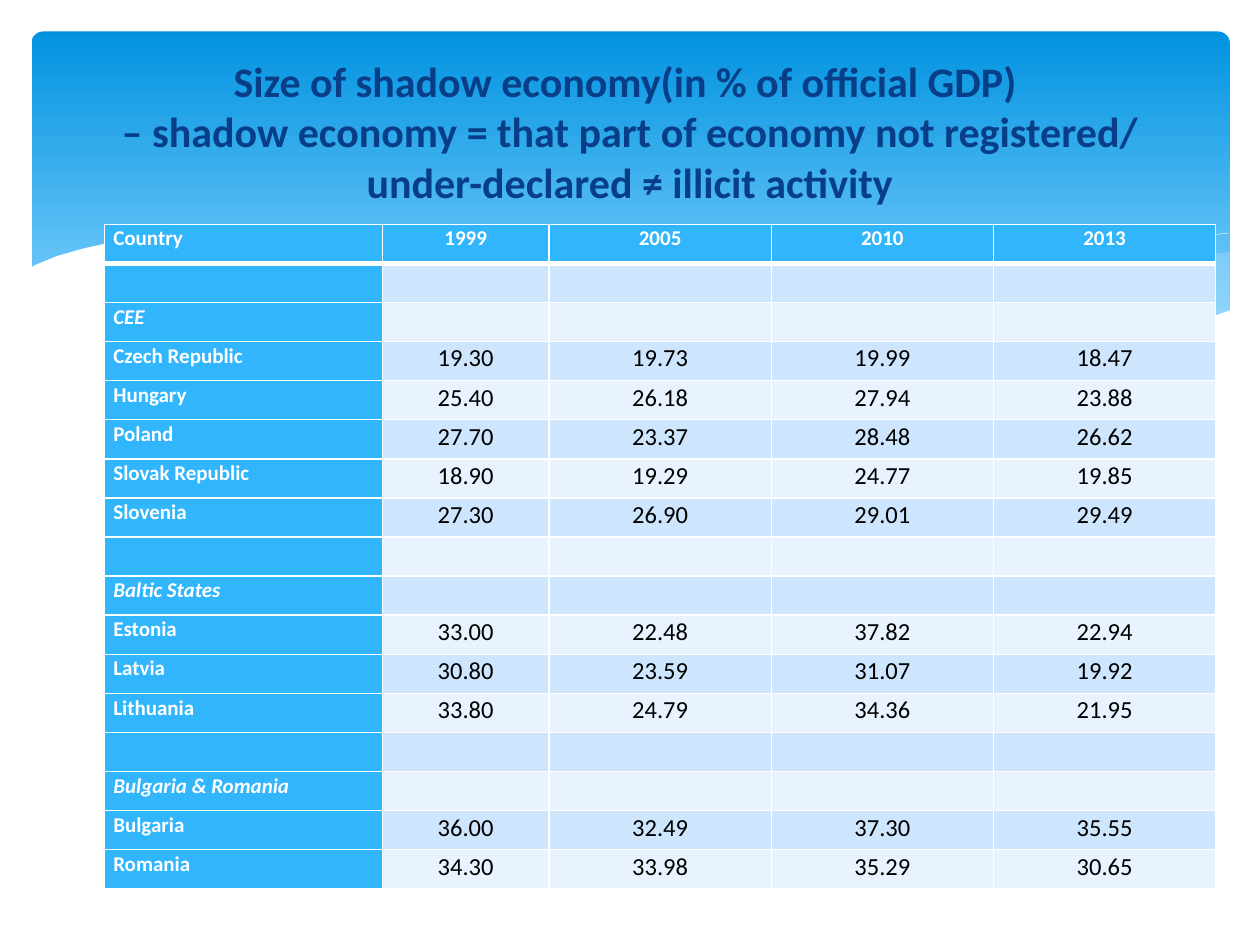
from lxml.etree import SubElement
from pptx import Presentation
from pptx.dml.color import RGBColor
from pptx.enum.shapes import MSO_SHAPE
from pptx.enum.text import MSO_ANCHOR, PP_ALIGN
from pptx.oxml.ns import qn
from pptx.util import Inches, Pt

# The slide is a grid of 100 columns by 75 rows
GRID_COLUMNS, GRID_ROWS = 100, 75
UNIT = Inches(0.1)
FONT = "Calibri"

COLORS = {
    "white": "FFFFFF",
    "black": "000000",
    "title": "073E87",
    "banner_top": "0293E0",
    "banner_bottom": "83D3FE",
    "veil": "C6E7FC",
    "header": "31B6FD",
    "band_dark": "CEE5FE",
    "band_light": "E8F3FF",
}

# Curves in percent of the wave box
RIGHT_VEIL = [
    (99.9, 11), (97, 13.8), (92.6, 20), (87.8, 26.9), (79.2, 40), (71.6, 50.3),
    (66.9, 55.9), (73, 60.7), (78.2, 64.1), (82.9, 64.8), (88.1, 62.8),
    (92.5, 58.6), (96.3, 51.7), (99.9, 43.4),
]
MIDDLE_VEIL = [
    (91.2, 61.4), (85.3, 55.9), (78.8, 48.3), (71.6, 38.6), (63.5, 26.2),
    (57.2, 16.6), (51.5, 9.7), (46.3, 4.8), (41.6, 2.1), (35.4, 0.7),
    (30.4, 2.8), (27.6, 4.8), (33.4, 10.3), (39.9, 18.6), (49.1, 33.1),
    (56.9, 44.1), (65.7, 55.2), (73.3, 62.1), (79.9, 64.8), (86.5, 64.1),
]
FALLING_LINE = [
    (30, 7.6), (33.6, 4.1), (39.6, 2.1), (46.8, 3.4), (55.9, 9), (64.3, 16.6),
    (73.8, 29), (84.7, 46.2), (92.7, 60.7),
]
RISING_LINE = [
    (61.8, 50.3), (70.4, 35.2), (78.9, 22.1), (88.4, 10.3), (94.4, 4.1), (99.8, 0.7),
]
WHITE_WAVE = [
    (100, 42.8), (96.1, 51.7), (91.8, 58.6), (86.7, 62.8), (82.4, 64.1),
    (75.6, 62.1), (69.7, 57.9), (63.2, 51), (55.8, 42.1), (44.4, 24.8),
    (35.8, 12.4), (28.2, 4.1), (21.7, 0.7), (16.1, 0), (11.4, 1.4), (7.5, 4.8),
    (4.6, 9), (2.4, 13.1), (0.6, 17.9), (0, 20), (0, 100), (100, 100),
]

TITLE = (
    "Size of shadow economy(in % of official GDP) \v"
    "– shadow economy = that part of economy not registered/\v"
    "under-declared ≠ illicit activity"
)
YEARS = ["1999", "2005", "2010", "2013"]
REGIONS = {
    "CEE": {
        "Czech Republic": (19.30, 19.73, 19.99, 18.47),
        "Hungary": (25.40, 26.18, 27.94, 23.88),
        "Poland": (27.70, 23.37, 28.48, 26.62),
        "Slovak Republic": (18.90, 19.29, 24.77, 19.85),
        "Slovenia": (27.30, 26.90, 29.01, 29.49),
    },
    "Baltic States": {
        "Estonia": (33.00, 22.48, 37.82, 22.94),
        "Latvia": (30.80, 23.59, 31.07, 19.92),
        "Lithuania": (33.80, 24.79, 34.36, 21.95),
    },
    "Bulgaria & Romania": {
        "Bulgaria": (36.00, 32.49, 37.30, 35.55),
        "Romania": (34.30, 33.98, 35.29, 30.65),
    },
}
COLUMN_SHARES = [0.25, 0.15, 0.2, 0.2, 0.2]


def color(name):
    return RGBColor.from_string(COLORS[name])


def to_emu(box):
    return [int(length * UNIT) for length in box]


def format_run(run, size, color_name, bold, italic=False):
    run.font.name = FONT
    run.font.size = Pt(size)
    run.font.bold = bold
    run.font.italic = italic
    run.font.color.rgb = color(color_name)


def add_banner(slide, box):
    banner = slide.shapes.add_shape(MSO_SHAPE.ROUNDED_RECTANGLE, *to_emu(box))
    banner.adjustments[0] = 0.034
    banner.shadow.inherit = False
    banner.line.fill.background()
    banner.fill.gradient()
    banner.fill.gradient_angle = 270
    stops = zip(banner.fill.gradient_stops, ("banner_top", "banner_bottom"), (0, 0.9))
    for stop, name, position in stops:
        stop.color.rgb = color(name)
        stop.position = position


def add_curve(slide, box, points, fill=None, opacity=100):
    """Draw a filled outline, or a thin white line when there is no fill."""
    left, top, width, height = to_emu(box)
    places = [(left + width * x / 100, top + height * y / 100) for x, y in points]
    builder = slide.shapes.build_freeform(*places[0])
    builder.add_line_segments(places[1:], close=fill is not None)
    curve = builder.convert_to_shape()
    curve.shadow.inherit = False
    if fill is None:
        curve.fill.background()
        curve.line.color.rgb = color("white")
        curve.line.width = Pt(0.25)
        return
    curve.line.fill.background()
    curve.fill.solid()
    curve.fill.fore_color.rgb = color(fill)
    if opacity < 100:
        fill_color = curve.element.spPr.find(qn("a:solidFill")).find(qn("a:srgbClr"))
        SubElement(fill_color, qn("a:alpha"), val=str(opacity * 1000))


def add_waves(slide, box):
    add_curve(slide, box, RIGHT_VEIL, "veil", 29)
    add_curve(slide, box, MIDDLE_VEIL, "veil", 40)
    add_curve(slide, box, FALLING_LINE)
    add_curve(slide, box, RISING_LINE)
    add_curve(slide, box, WHITE_WAVE, "white")


def add_title(slide, box):
    frame = slide.shapes.add_textbox(*to_emu(box)).text_frame
    frame.word_wrap = True
    frame.vertical_anchor = MSO_ANCHOR.MIDDLE
    frame.text = TITLE
    heading = frame.paragraphs[0]
    heading.alignment = PP_ALIGN.CENTER
    for run in heading.runs:
        format_run(run, 24, "title", True)


def set_borders(cell, widths):
    properties = cell._tc.get_or_add_tcPr()
    for index, (side, points) in enumerate(widths.items()):
        border = SubElement(properties, qn(f"a:{side}"), w=str(Pt(points)))
        line_fill = SubElement(border, qn("a:solidFill"))
        SubElement(line_fill, qn("a:srgbClr"), val=COLORS["white"])
        properties.insert(index, border)


def economy_rows():
    rows = [["Country", *YEARS]]
    for region, countries in REGIONS.items():
        rows += [[""] * 5, [region] + [""] * 4]
        rows += [[name, *(f"{share:.2f}" for share in shares)]
                 for name, shares in countries.items()]
    return rows


def fill_cell(cell, text, row, column):
    heading = row == 0 or column == 0
    band = "band_dark" if row % 2 else "band_light"
    cell.fill.solid()
    cell.fill.fore_color.rgb = color("header" if heading else band)
    cell.margin_left = cell.margin_right = Inches(0.07)
    cell.margin_top = cell.margin_bottom = 0
    set_borders(cell, {"lnL": 1, "lnR": 1, "lnT": 3 if row == 1 else 1,
                       "lnB": 3 if row == 0 else 1})
    if text:
        cell.text_frame.text = text
        entry = cell.text_frame.paragraphs[0]
        entry.line_spacing = 1.07
        entry.alignment = PP_ALIGN.CENTER if column else PP_ALIGN.LEFT
        format_run(entry.runs[0], 12 if heading else 14,
                   "white" if heading else "black", heading, text in REGIONS)


def add_economy_table(slide, box):
    rows = economy_rows()
    left, top, width, height = to_emu(box)
    table = slide.shapes.add_table(
        len(rows), len(COLUMN_SHARES), left, top, width, height).table
    for table_column, share in zip(table.columns, COLUMN_SHARES):
        table_column.width = int(width * share)
    for row, texts in enumerate(rows):
        table.rows[row].height = height // len(rows)
        for column, text in enumerate(texts):
            fill_cell(table.cell(row, column), text, row, column)


def main():
    presentation = Presentation()
    presentation.slide_width = GRID_COLUMNS * UNIT
    presentation.slide_height = GRID_ROWS * UNIT
    slide = presentation.slides.add_slide(presentation.slide_layouts[6])
    add_banner(slide, (2.5, 2.5, 95.1, 27))
    add_waves(slide, (2.3, 18.4, 95.4, 14.5))
    add_economy_table(slide, (8.3, 17.8, 88.2, 52.8))
    add_title(slide, (5, 3, 90, 14.8))
    presentation.save("out.pptx")


if __name__ == "__main__":
    main()
